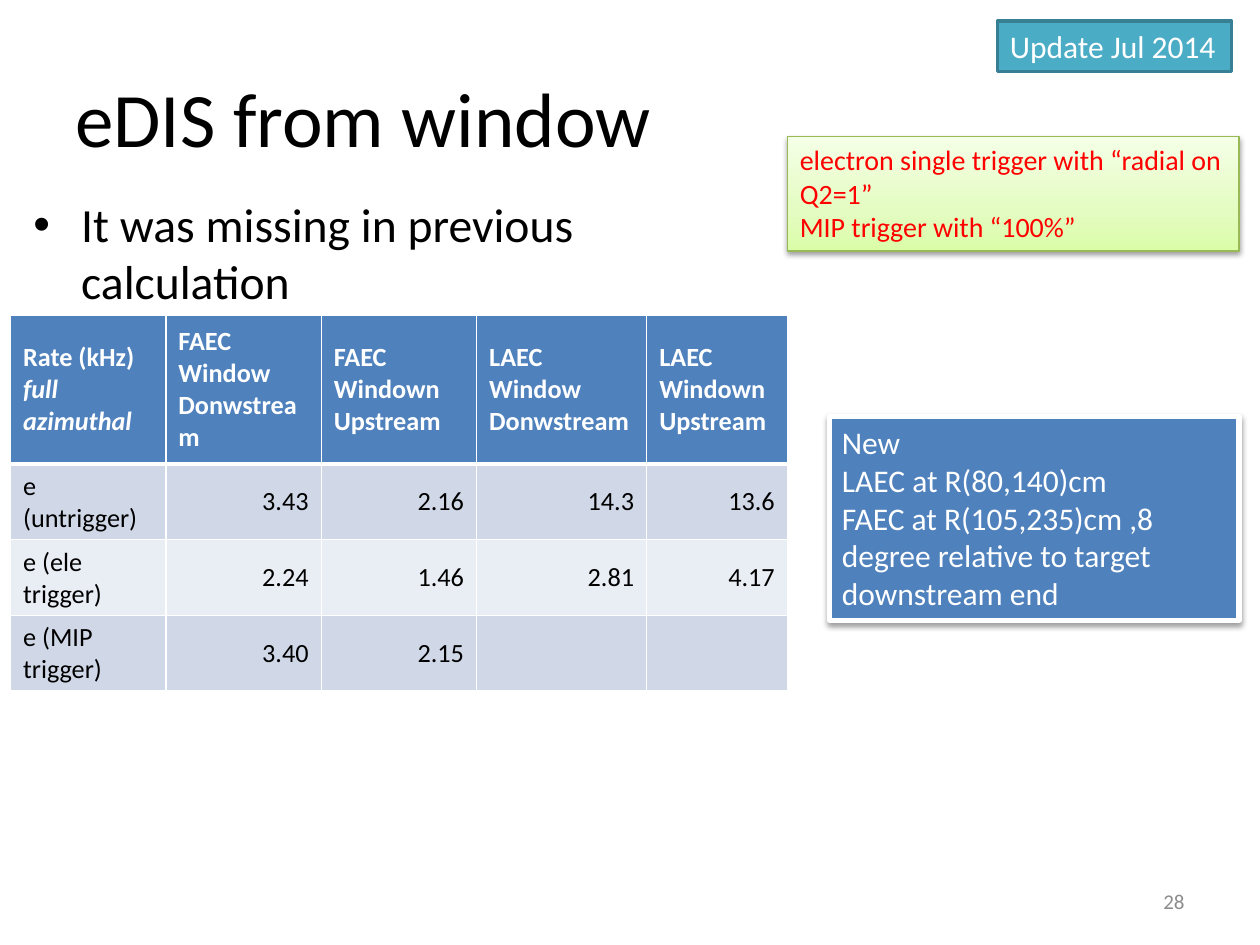
from copy import deepcopy

from lxml import etree
from pptx import Presentation
from pptx.dml.color import RGBColor
from pptx.enum.shapes import MSO_SHAPE
from pptx.enum.text import MSO_ANCHOR, MSO_AUTO_SIZE, PP_ALIGN
from pptx.oxml import parse_xml
from pptx.oxml.ns import qn
from pptx.util import Inches, Pt

RECT = MSO_SHAPE.RECTANGLE
TOP, MIDDLE = MSO_ANCHOR.TOP, MSO_ANCHOR.MIDDLE
LEFT, RIGHT = PP_ALIGN.LEFT, PP_ALIGN.RIGHT
GROW = MSO_AUTO_SIZE.SHAPE_TO_FIT_TEXT

BLACK = RGBColor(0x00, 0x00, 0x00)
WHITE = RGBColor(0xFF, 0xFF, 0xFF)
GREY = RGBColor(0x8C, 0x8C, 0x8C)
RED = RGBColor(0xFF, 0x00, 0x00)
BLUE = RGBColor(0x4F, 0x81, 0xBD)
BAND_DARK = RGBColor(0xD0, 0xD8, 0xE8)
BAND_LIGHT = RGBColor(0xE9, 0xED, 0xF4)
TEAL = RGBColor(0x4B, 0xAC, 0xC6)
TEAL_DARK = RGBColor(0x37, 0x7F, 0x92)
GREEN_LINE = RGBColor(0x98, 0xB9, 0x55)
GREEN_STOPS = [
    (0, RGBColor(0xDA, 0xFD, 0xA7)),
    (0.35, RGBColor(0xE4, 0xFC, 0xC2)),
    (1, RGBColor(0xF5, 0xFF, 0xE7)),
]

FONT = "Calibri"
GRID_COLS, GRID_ROWS = 120, 90
UNIT = Inches(10) / GRID_COLS
A_NS = 'xmlns:a="http://schemas.openxmlformats.org/drawingml/2006/main"'
SHADOW = (
    f'<a:outerShdw {A_NS} blurRad="40000" dist="20000" dir="5400000" rotWithShape="0">'
    '<a:srgbClr val="000000"><a:alpha val="38000"/></a:srgbClr></a:outerShdw>'
)

TABLE_COLS = [14.8, 14.8, 14.8, 16.2, 13.4]
TABLE_ROWS = [14.2, 7.2, 7.2, 7.2]
HEADERS = [
    ["Rate (kHz)", "full azimuthal"],
    ["FAEC", "Window", "Donwstream"],
    ["FAEC", "Windown", "Upstream"],
    ["LAEC", "Window", "Donwstream"],
    ["LAEC", "Windown", "Upstream"],
]
RATES = [
    ["e (untrigger)", "3.43", "2.16", "14.3", "13.6"],
    ["e (ele trigger)", "2.24", "1.46", "2.81", "4.17"],
    ["e (MIP trigger)", "3.40", "2.15", "", ""],
]


def grid(*cells):
    """Turn grid counts into slide lengths."""
    return [round(n * UNIT) for n in cells]


def write(tf, lines, align=LEFT, **fmt):
    """Fill a text frame with one paragraph per line."""
    for i, line in enumerate(lines):
        p = tf.add_paragraph() if i else tf.paragraphs[0]
        p.alignment = align
        r = p.add_run()
        r.text = line
        r.font.color.rgb = fmt["color"]
        for name, value in fmt.items():
            if name != "color":
                setattr(r.font, name, value)
        r.font.name = FONT


def add_text(slide, box, lines, anchor=TOP, align=LEFT, **fmt):
    """Add a wrapping text box and return its text frame."""
    tf = slide.shapes.add_textbox(*grid(*box)).text_frame
    tf.word_wrap = True
    tf.vertical_anchor = anchor
    write(tf, lines, align, **fmt)
    return tf


def add_bullet(slide, box, line):
    """Add the bulleted statement with a hanging indent."""
    tf = add_text(slide, box, [line], size=Pt(27.2), color=BLACK)
    p = tf.paragraphs[0]
    p.space_before = Pt(5.4)
    pPr = p._p.get_or_add_pPr()
    pPr.set("marL", str(Inches(0.38)))
    pPr.set("indent", str(-Inches(0.38)))
    pPr.append(parse_xml(f'<a:buFont {A_NS} typeface="Arial"/>'))
    pPr.append(parse_xml(f'<a:buChar {A_NS} char="•"/>'))


def paint_gradient(fill, stops):
    """Paint an upward gradient through all the stops."""
    fill.gradient()
    fill.gradient_angle = 90
    first, last = fill._fill._gradFill.gsLst
    first.addnext(deepcopy(first))
    for stop, (position, color) in zip(fill.gradient_stops, stops):
        stop.position = position
        stop.color.rgb = color


def add_note(slide, box, lines, fill, line, width, size, color, shadow=True, wrap=True):
    """Add a filled note that grows with its text."""
    sp = slide.shapes.add_shape(RECT, *grid(*box))
    if isinstance(fill, list):
        paint_gradient(sp.fill, fill)
    else:
        sp.fill.solid()
        sp.fill.fore_color.rgb = fill
    sp.line.color.rgb = line
    sp.line.width = Pt(width)
    sp.shadow.inherit = False
    if shadow:
        sp._element.spPr.find(qn("a:effectLst")).append(parse_xml(SHADOW))
    tf = sp.text_frame
    for name, value in dict(word_wrap=wrap, auto_size=GROW, vertical_anchor=TOP).items():
        setattr(tf, name, value)
    write(tf, lines, size=Pt(size), color=color)


def style_cell(cell, fill, bottom=1):
    """Give a cell its fill, anchor and white borders."""
    cell.vertical_anchor = MIDDLE
    tcPr = cell._tc.get_or_add_tcPr()
    for side, width in dict(lnL=1, lnR=1, lnT=1, lnB=bottom).items():
        ln = etree.SubElement(tcPr, qn(f"a:{side}"), w=str(Pt(width)))
        solid = etree.SubElement(ln, qn("a:solidFill"))
        etree.SubElement(solid, qn("a:srgbClr"), val=str(WHITE))
    cell.fill.solid()
    cell.fill.fore_color.rgb = fill


def add_rates(slide, left, top):
    """Add the table of rates with its header and banded rows."""
    size = sum(TABLE_COLS), sum(TABLE_ROWS)
    shape = (len(TABLE_ROWS), len(TABLE_COLS))
    table = slide.shapes.add_table(*shape, *grid(left, top, *size)).table
    for col, width in zip(table.columns, grid(*TABLE_COLS)):
        col.width = width
    for row, height in zip(table.rows, grid(*TABLE_ROWS)):
        row.height = height
    for c, lines in enumerate(HEADERS):
        cell = table.cell(0, c)
        style_cell(cell, BLUE, bottom=3)
        write(cell.text_frame, lines, size=Pt(15), color=WHITE, bold=True)
    table.cell(0, 0).text_frame.paragraphs[1].runs[0].font.italic = True
    for r, values in enumerate(RATES, 1):
        for c, value in enumerate(values):
            cell = table.cell(r, c)
            style_cell(cell, BAND_DARK if r % 2 else BAND_LIGHT)
            lines = [value] if value else []
            write(cell.text_frame, lines, RIGHT if c else LEFT,
                  size=Pt(15), color=BLACK, bold=False)


def build():
    """Build the slide and save it."""
    prs = Presentation()
    prs.slide_width, prs.slide_height = grid(GRID_COLS, GRID_ROWS)
    slide = prs.slides.add_slide(prs.slide_layouts[6])
    add_text(slide, (6, 3.6, 108, 15), ["eDIS from window"], MIDDLE,
             size=Pt(44), color=BLACK)
    add_bullet(slide, (2, 18, 65, 10), "It was missing in previous calculation")
    add_text(slide, (86, 83.4, 28, 4.8), ["28"], MIDDLE, RIGHT, size=Pt(12), color=GREY)
    add_rates(slide, 1, 30)
    add_note(slide, (75, 13, 43, 10.9),
             ["electron single trigger with “radial on Q2=1”", "MIP trigger with “100%”"],
             GREEN_STOPS, GREEN_LINE, 0.75, 16, RED)
    add_note(slide, (79, 39.7, 39, 19.4),
             ["New", "LAEC at R(80,140)cm",
              "FAEC at R(105,235)cm ,8 degree relative to target downstream end"],
             BLUE, WHITE, 3, 18, WHITE)
    add_note(slide, (95, 2, 22.3, 4.8), ["Update Jul 2014"], TEAL, TEAL_DARK, 2, 18, WHITE,
             shadow=False, wrap=False)
    prs.save("out.pptx")


if __name__ == "__main__":
    build()
